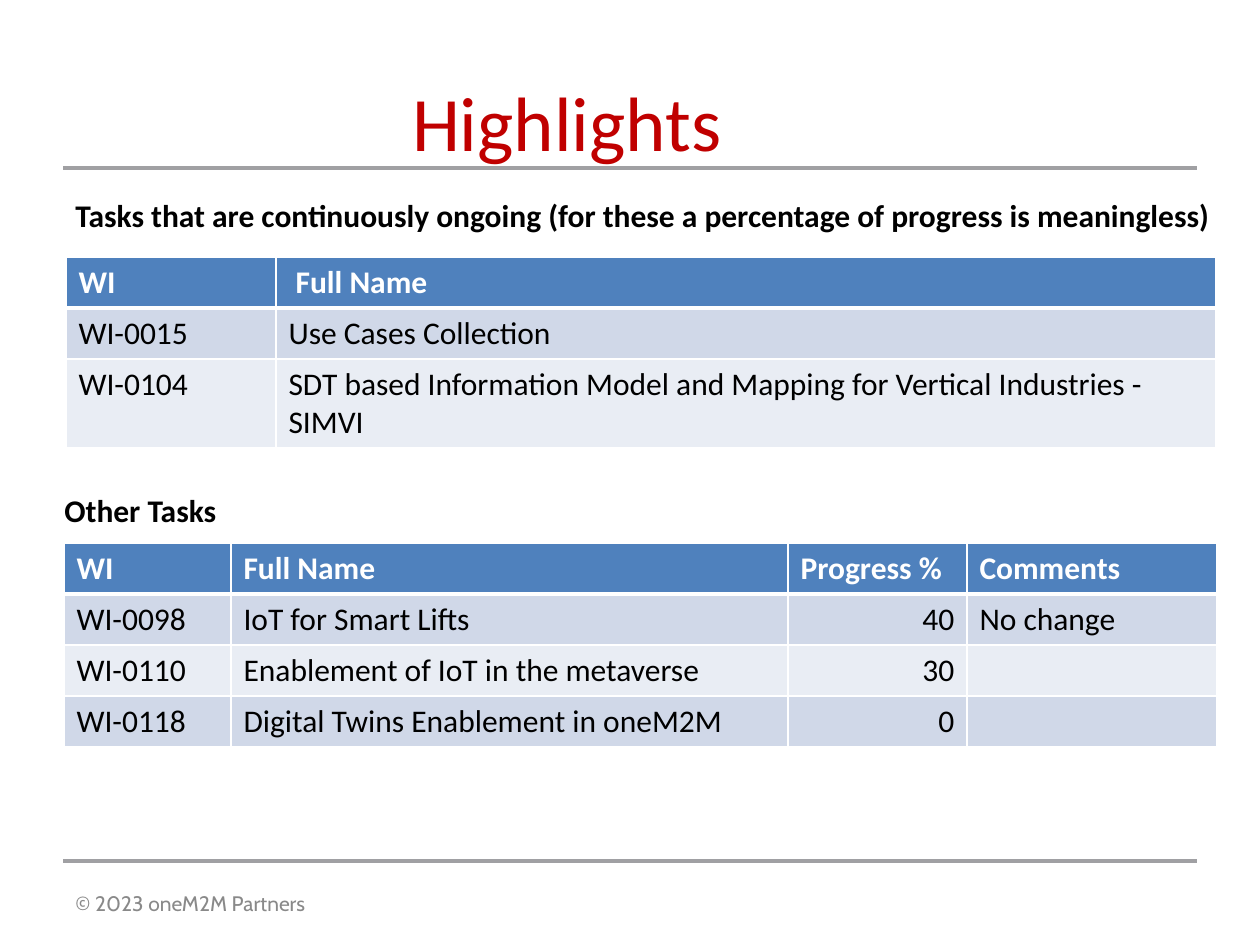
from lxml import etree
from pptx import Presentation
from pptx import util as u
from pptx.dml.color import RGBColor
from pptx.enum import shapes, text
from pptx.oxml import ns

RED = RGBColor(0xC0, 0x00, 0x00)
BLACK = RGBColor(0x00, 0x00, 0x00)
WHITE = RGBColor(0xFF, 0xFF, 0xFF)
GREY = RGBColor(0x89, 0x89, 0x89)
RULE = RGBColor(0xA0, 0xA0, 0xA3)
HEADER = RGBColor(0x4F, 0x81, 0xBD)
BANDS = (RGBColor(0xD0, 0xD8, 0xE8), RGBColor(0xE9, 0xED, 0xF4))
ROW_HEIGHT = 51


def px(n):
    """Turn whole pixels into EMU at 126 px to the inch."""
    return u.Emu(round(n * 914400 / 126))


def write(tf, words, size=18, font="Calibri", color=BLACK, bold=False,
          align=text.PP_ALIGN.LEFT):
    """Write one formatted line of text into a text frame."""
    p = tf.paragraphs[0]
    p.alignment = align
    r = p.add_run()
    r.text = words
    r.font.size, r.font.name, r.font.bold = u.Pt(size), font, bold
    r.font.color.rgb = color


def add_text(s, box, words, wrap=True, anchor=text.MSO_ANCHOR.TOP, top=6, **fmt):
    """Add a text box holding one line."""
    tf = s.shapes.add_textbox(*map(px, box)).text_frame
    tf.word_wrap = wrap
    tf.vertical_anchor = anchor
    tf.margin_top = px(top)
    write(tf, words, **fmt)


def add_rule(s, x, y, width):
    """Add a horizontal grey rule without a shadow."""
    line = s.shapes.add_connector(shapes.MSO_CONNECTOR.STRAIGHT,
                                  px(x), px(y), px(x + width), px(y))
    line.line.color.rgb = RULE
    line.line.width = u.Pt(1.75)
    etree.SubElement(line._element.spPr, ns.qn("a:effectLst"))


def set_borders(cell, widths):
    """Give a cell white borders with a width in points for each side."""
    tc_pr = cell._tc.get_or_add_tcPr()
    for i, (side, width) in enumerate(widths.items()):
        ln = etree.Element(ns.qn(f"a:ln{side}"), w=str(u.Pt(width)))
        fill = etree.SubElement(ln, ns.qn("a:solidFill"))
        etree.SubElement(fill, ns.qn("a:srgbClr"), val=str(WHITE))
        tc_pr.insert(i, ln)


def add_task_table(s, x, y, col_widths, rows):
    """Add a banded table of work items whose first row is the header."""
    table = s.shapes.add_table(len(rows), len(col_widths), px(x), px(y),
                               px(sum(col_widths)), px(ROW_HEIGHT * len(rows))).table
    for col, width in zip(table.columns, col_widths):
        col.width = px(width)
    for i, row in enumerate(rows):
        table.rows[i].height = px(ROW_HEIGHT)
        head = i == 0
        for j, words in enumerate(row):
            cell = table.cell(i, j)
            cell.fill.solid()
            cell.fill.fore_color.rgb = HEADER if head else BANDS[(i - 1) % 2]
            set_borders(cell, {"L": 1, "R": 1, "T": 3 if i == 1 else 1,
                               "B": 3 if head else 1})
            align = text.PP_ALIGN.RIGHT if words.isdigit() else text.PP_ALIGN.LEFT
            write(cell.text_frame, words, color=WHITE if head else BLACK,
                  bold=head, align=align)


def add_frame(s, x, width):
    """Add the title, the footer and the rules beside them."""
    add_rule(s, x, 861, width)
    add_rule(s, x, 168, width)
    add_text(s, (0, 63, width, 158), "Highlights", top=11, size=44, color=RED,
             align=text.PP_ALIGN.CENTER)
    add_text(s, (x, 861, width, 84), "© 2023 oneM2M Partners", size=12,
             font="Cabin", color=GREY, anchor=text.MSO_ANCHOR.MIDDLE)


def add_ongoing_tasks(s, x, y):
    """Add the heading and table of continuously ongoing tasks."""
    add_text(s, (x, y, 1168, 51),
             "Tasks that are continuously ongoing "
             "(for these a percentage of progress is meaningless)",
             wrap=False, bold=True)
    add_task_table(s, x + 3, y + 67, (210, 940), (
        ("WI", " Full Name"),
        ("WI-0015", "Use Cases Collection"),
        ("WI-0104", "SDT based Information Model and Mapping "
                    "for Vertical Industries - SIMVI"),
    ))


def add_other_tasks(s, x, y):
    """Add the heading and table of tasks with measured progress."""
    add_text(s, (x, y, 179, 51), "Other Tasks", wrap=False, bold=True)
    add_task_table(s, x + 12, y + 58, (167, 557, 179, 250), (
        ("WI", "Full Name", "Progress %", "Comments"),
        ("WI-0098", "IoT for Smart Lifts", "40", "No change"),
        ("WI-0110", "Enablement of IoT in the metaverse", "30", ""),
        ("WI-0118", "Digital Twins Enablement in oneM2M", "0", ""),
    ))


def main():
    """Build the highlights slide and save it."""
    prs = Presentation()
    prs.slide_width, prs.slide_height = px(1260), px(945)
    s = prs.slides.add_slide(prs.slide_layouts[6])
    add_frame(s, 63, 1134)
    add_ongoing_tasks(s, 63, 190)
    add_other_tasks(s, 52, 485)
    prs.save("out.pptx")


if __name__ == "__main__":
    main()
